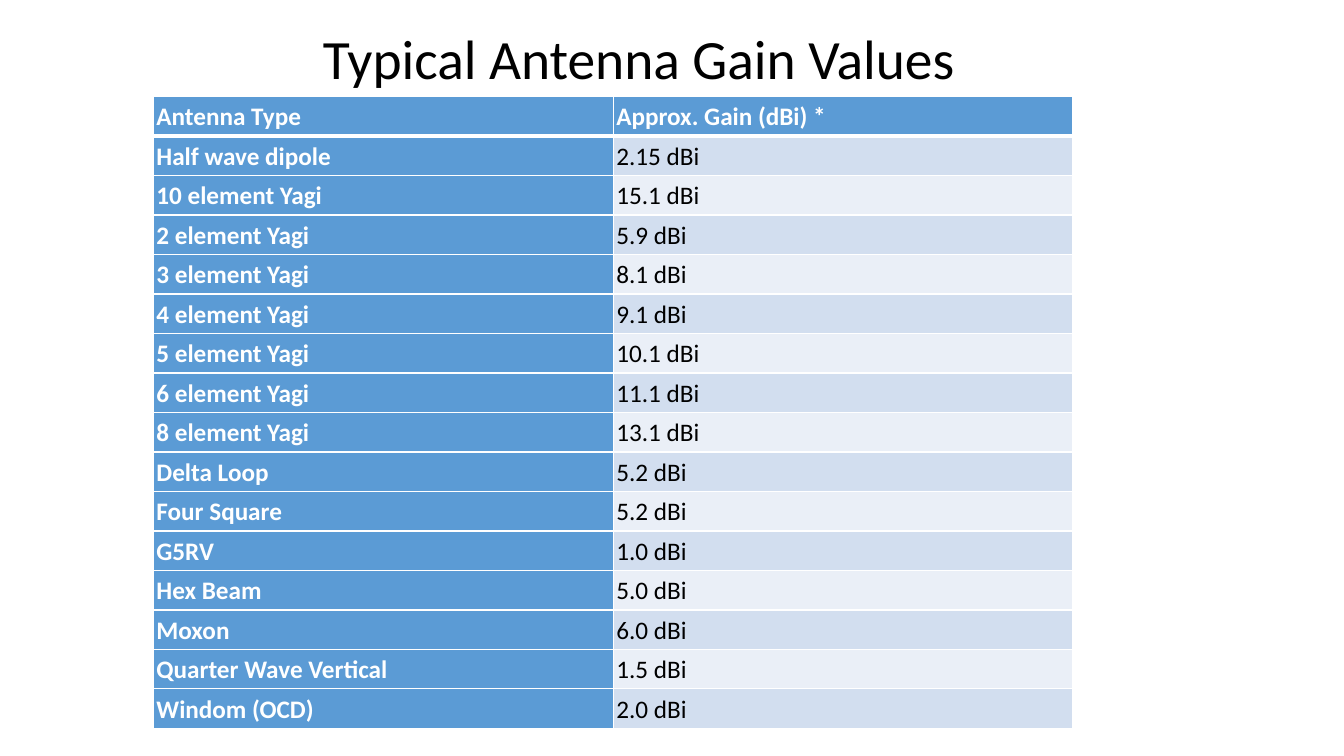
from typing import NamedTuple

from lxml.etree import SubElement
from pptx import Presentation
from pptx.dml.color import RGBColor
from pptx.enum.text import MSO_ANCHOR, PP_ALIGN
from pptx.oxml.ns import qn
from pptx.util import Emu, Pt

FONT = "Calibri"
COLORS = {
    "text": "000000",
    "white": "FFFFFF",
    "header": "5B9BD5",
    "band_dark": "D2DEEF",
    "band_light": "EAEFF7",
}


class Box(NamedTuple):
    left: int
    top: int
    width: int
    height: int


class Antenna(NamedTuple):
    kind: str
    gain: str


TITLE_BOX = Box(253, 26, 711, 66)
TABLE_BOX = Box(146, 92, 876, 602)
INSET = 3
HEADER = Antenna("Antenna Type", "Approx. Gain (dBi) *")
ANTENNAS = [
    Antenna("Half wave dipole", "2.15 dBi"),
    Antenna("10 element Yagi", "15.1 dBi"),
    Antenna("2 element Yagi", "5.9 dBi"),
    Antenna("3 element Yagi", "8.1 dBi"),
    Antenna("4 element Yagi", "9.1 dBi"),
    Antenna("5 element Yagi", "10.1 dBi"),
    Antenna("6 element Yagi", "11.1 dBi"),
    Antenna("8 element Yagi", "13.1 dBi"),
    Antenna("Delta Loop", "5.2 dBi"),
    Antenna("Four Square", "5.2 dBi"),
    Antenna("G5RV", "1.0 dBi"),
    Antenna("Hex Beam", "5.0 dBi"),
    Antenna("Moxon", "6.0 dBi"),
    Antenna("Quarter Wave Vertical", "1.5 dBi"),
    Antenna("Windom (OCD)", "2.0 dBi"),
]


def px(n: int) -> Emu:
    return Emu(n * 9525)


def rgb(name: str) -> RGBColor:
    return RGBColor.from_string(COLORS[name])


def add_run(p, text: str, size: float, color: str, bold: bool = False) -> None:
    r = p.add_run()
    r.text = text
    r.font.name = FONT
    r.font.size = Pt(size)
    r.font.bold = bold
    r.font.color.rgb = rgb(color)


def add_title(s, text: str, box: Box) -> None:
    tf = s.shapes.add_textbox(*map(px, box)).text_frame
    tf.word_wrap = True
    tf.vertical_anchor = MSO_ANCHOR.MIDDLE
    p = tf.paragraphs[0]
    p.alignment = PP_ALIGN.CENTER
    p.line_spacing = 0.9
    add_run(p, text, 39.6, "text")


def set_borders(cell, top: int, bottom: int) -> None:
    """Border widths in points; the sides are always 1 pt."""
    tc_pr = cell._tc.get_or_add_tcPr()
    for side, width in (("L", 1), ("R", 1), ("T", top), ("B", bottom)):
        ln = SubElement(tc_pr, qn(f"a:ln{side}"), w=str(Pt(width)))
        fill = SubElement(ln, qn("a:solidFill"))
        SubElement(fill, qn("a:srgbClr"), val=COLORS["white"])


def fill_cell(cell, text: str, row: int, col: int) -> None:
    is_header = row == 0 or col == 0
    # Borders come before the fill in the cell properties
    set_borders(cell, top=3 if row == 1 else 1, bottom=3 if row == 0 else 1)
    cell.fill.solid()
    band = "band_dark" if row % 2 else "band_light"
    cell.fill.fore_color.rgb = rgb("header" if is_header else band)
    cell.margin_left = cell.margin_right = px(INSET)
    cell.margin_top = cell.margin_bottom = px(INSET)
    p = cell.text_frame.paragraphs[0]
    p.line_spacing = 1.07
    add_run(p, text, 18, "white" if is_header else "text", bold=is_header)


def add_gain_table(s, rows: list[Antenna], box: Box) -> None:
    table = s.shapes.add_table(len(rows), len(HEADER), *map(px, box)).table
    table.first_col = True
    for i, antenna in enumerate(rows):
        table.rows[i].height = px(box.height) // len(rows)
        for j, text in enumerate(antenna):
            fill_cell(table.cell(i, j), text, i, j)


def main() -> None:
    prs = Presentation()
    prs.slide_width, prs.slide_height = px(1280), px(720)
    s = prs.slides.add_slide(prs.slide_layouts[6])

    # Title
    add_title(s, "Typical Antenna Gain Values", TITLE_BOX)

    # Table of gains
    add_gain_table(s, [HEADER, *ANTENNAS], TABLE_BOX)

    prs.save("out.pptx")


if __name__ == "__main__":
    main()
